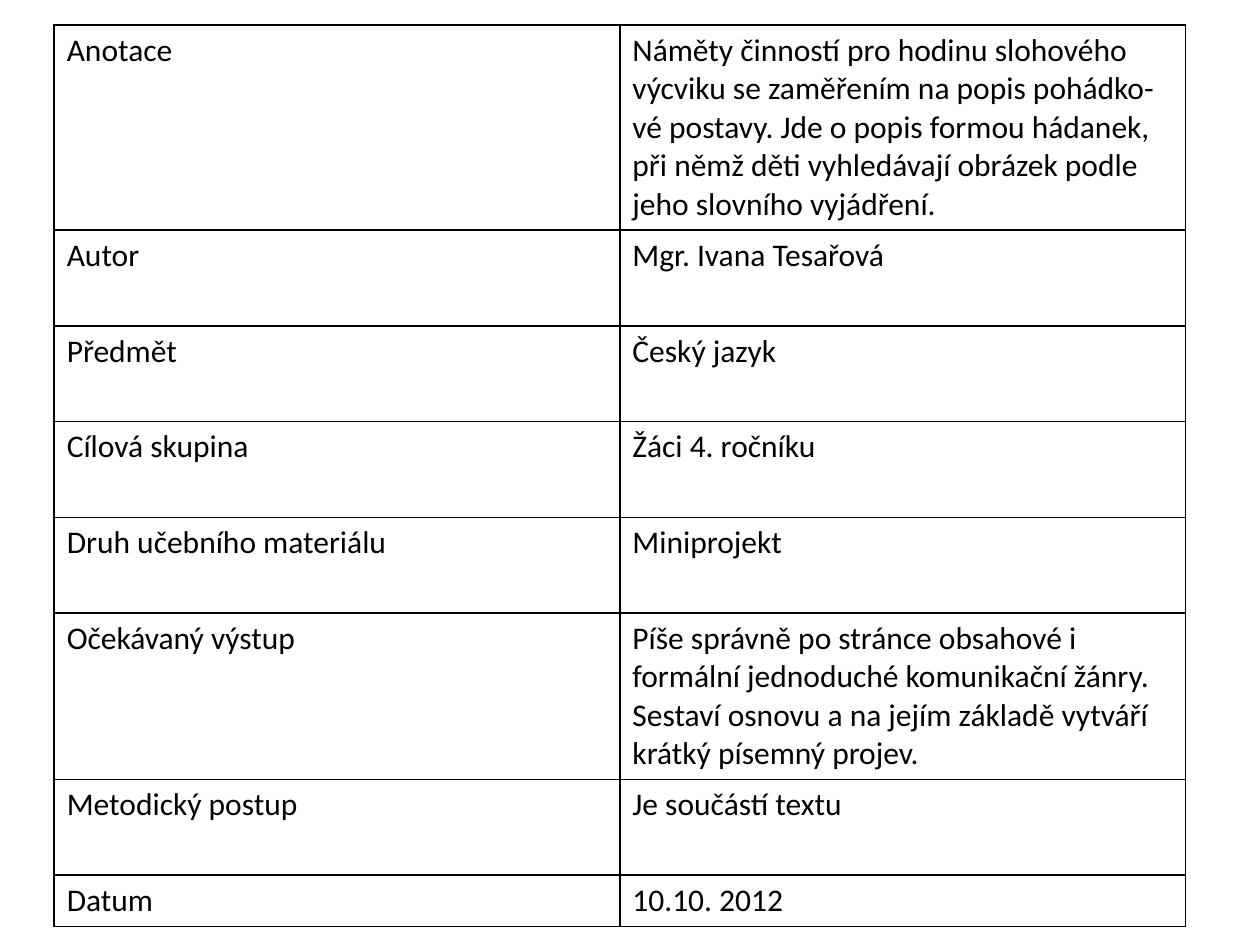
from lxml.etree import SubElement
from pptx import Presentation
from pptx.dml.color import RGBColor as RGB
from pptx.oxml.ns import qn
from pptx.util import Inches, Pt

COLORS = {"ink": "000000", "line": "000000"}

ROWS = [
    ("Anotace", "Náměty činností pro hodinu slohového výcviku se zaměřením na "
                "popis pohádko- vé postavy. Jde o popis formou hádanek, při němž "
                "děti vyhledávají obrázek podle jeho slovního vyjádření."),
    ("Autor", "Mgr. Ivana Tesařová"),
    ("Předmět", "Český jazyk"),
    ("Cílová skupina", "Žáci 4. ročníku"),
    ("Druh učebního materiálu", "Miniprojekt"),
    ("Očekávaný výstup", "Píše správně po stránce obsahové i formální jednoduché "
                         "komunikační žánry. Sestaví osnovu a na jejím základě "
                         "vytváří krátký písemný projev."),
    ("Metodický postup", "Je součástí textu"),
    ("Datum", "10.10. 2012"),
]


class Deck:
    font = "Calibri"
    size = Pt(18)
    border = Pt(1)

    def __init__(self, wide, high):
        self.prs = Presentation()
        self.prs.slide_width, self.prs.slide_height = Inches(wide), Inches(high)
        self.slide = self.prs.slides.add_slide(self.prs.slide_layouts[6])

    def table(self, left, top, width, heights, rows):
        count = len(rows[0])
        frame = self.slide.shapes.add_table(
            len(rows), count, Inches(left), Inches(top),
            Inches(width), Inches(sum(heights)))
        table = frame.table
        table.first_row = table.horz_banding = False
        for col in table.columns:
            col.width = Inches(width / count)
        for row, high, texts in zip(table.rows, heights, rows):
            row.height = Inches(high)
            for cell, text in zip(row.cells, texts):
                self.cell(cell, text)

    def cell(self, cell, text):
        cell.text_frame.text = text
        font = cell.text_frame.paragraphs[0].runs[0].font
        font.name, font.size = self.font, self.size
        font.color.rgb = RGB.from_string(COLORS["ink"])
        # Borders must come before the fill in the cell properties
        props = cell._tc.get_or_add_tcPr()
        for side in ("lnL", "lnR", "lnT", "lnB"):
            line = SubElement(props, qn(f"a:{side}"), w=str(self.border))
            fill = SubElement(line, qn("a:solidFill"))
            SubElement(fill, qn("a:srgbClr"), val=COLORS["line"])
        cell.fill.background()


def main():
    deck = Deck(10, 7.5)
    # Lesson details: equal rows that grow with their text, and a low last row
    heights = [0.76] * (len(ROWS) - 1) + [0.24]
    deck.table(0.43, 0.2, 8.98, heights, ROWS)
    deck.prs.save("out.pptx")


if __name__ == "__main__":
    main()
